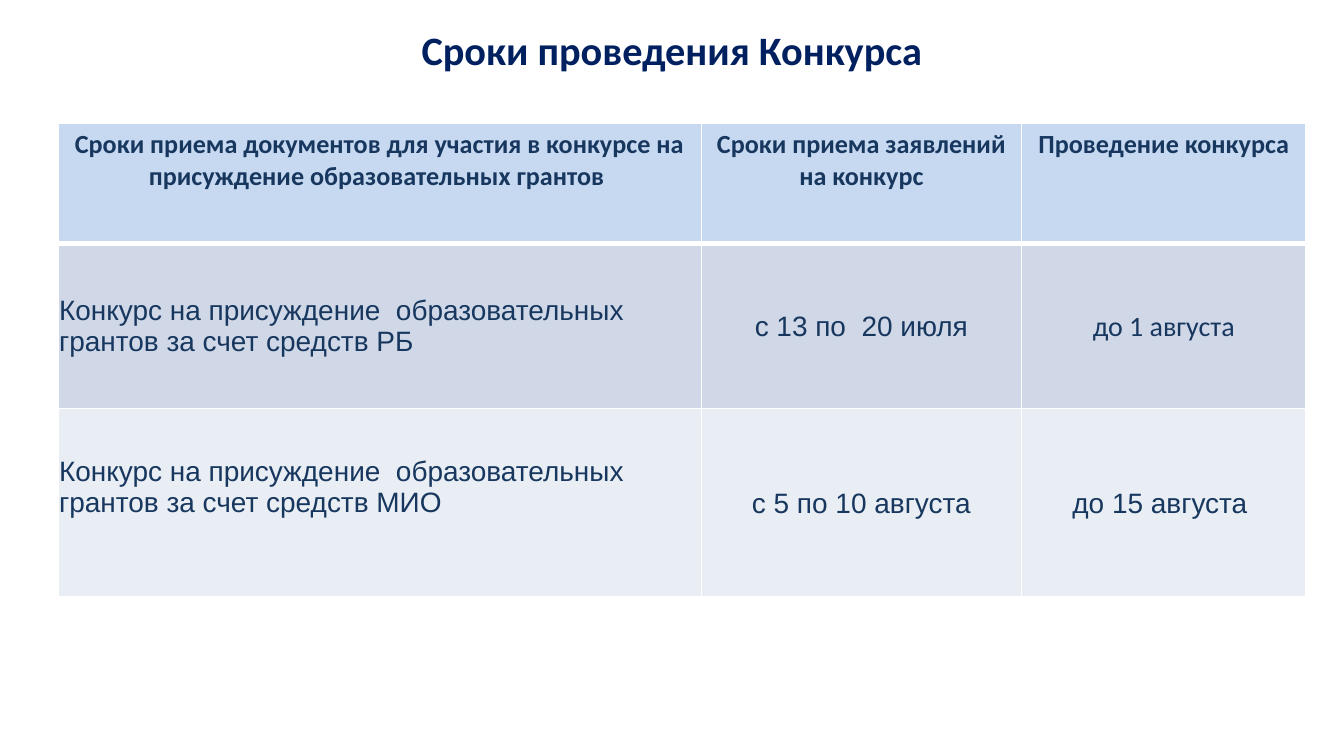
from dataclasses import dataclass

from lxml.etree import SubElement
from pptx import Presentation
from pptx.dml.color import RGBColor
from pptx.enum.text import MSO_ANCHOR as Anchor, MSO_AUTO_SIZE as AutoSize, PP_ALIGN as Align
from pptx.oxml.ns import qn
from pptx.util import Inches, Pt


@dataclass(frozen=True)
class Theme:
    title: str = "002060"
    text: str = "17375E"
    border: str = "FFFFFF"
    header_fill: str = "C6D9F1"
    band_fills: tuple = ("D0D8E8", "E9EDF4")
    heading_font: str = "Calibri"
    body_font: str = "Arial"
    title_size: float = 21.6
    header_size: float = 14
    body_size: float = 15


THEME = Theme()
HEADERS = (
    "Сроки приема документов для участия в конкурсе на присуждение образовательных грантов ",
    "Сроки приема заявлений на конкурс",
    "Проведение конкурса",
)
ROWS = (
    ("Конкурс на присуждение  образовательных грантов за счет средств РБ",
     "с 13 по  20 июля", "до 1 августа"),
    ("Конкурс на присуждение  образовательных грантов за счет средств МИО",
     "с 5 по 10 августа", "до 15 августа "),
)
COL_WIDTHS = (4.79, 2.38, 2.12)
ROW_HEIGHTS = (0.89, 1.23, 1.4)
HEADER_MARGINS = (0.1, 0.04, 0.1, 0.04)
BODY_MARGINS = (0.01, 0.01, 0.01, 0)
RAISED_MARGINS = (0.01, 0.01, 0.01, 0.24)
HEADER_BORDERS = {"a:lnL": 1, "a:lnR": 1, "a:lnT": 1, "a:lnB": 3}
BODY_BORDERS = {"a:lnL": 1, "a:lnR": 1, "a:lnB": 1}
FIRST_BODY_BORDERS = {"a:lnL": 1, "a:lnR": 1, "a:lnT": 3, "a:lnB": 1}


def set_attrs(obj, values):
    for name, value in values.items():
        setattr(obj, name, value)


def write(tf, text, align, color, **font):
    p = tf.paragraphs[0]
    p.alignment = align
    r = p.add_run()
    r.text = text
    set_attrs(r.font, font)
    r.font.color.rgb = RGBColor.from_string(color)


def format_cell(cell, fill, anchor, margins, borders):
    tc_pr = cell._tc.get_or_add_tcPr()
    for tag, width in borders.items():
        ln = SubElement(tc_pr, qn(tag), w=str(Pt(width)))
        SubElement(SubElement(ln, qn("a:solidFill")), qn("a:srgbClr"), val=THEME.border)
    cell.fill.solid()
    cell.fill.fore_color.rgb = RGBColor.from_string(fill)
    tc_pr.append(tc_pr.find(qn("a:solidFill")))
    cell.vertical_anchor = anchor
    sides = ("margin_left", "margin_top", "margin_right", "margin_bottom")
    set_attrs(cell, dict(zip(sides, map(Inches, margins))))


def add_title(s, left, top, width, height):
    sp = s.shapes.title
    set_attrs(sp, dict(left=Inches(left), top=Inches(top),
                       width=Inches(width), height=Inches(height)))
    tf = sp.text_frame
    set_attrs(tf, dict(auto_size=AutoSize.NONE, word_wrap=True,
                       vertical_anchor=Anchor.MIDDLE))
    write(tf, "Сроки проведения Конкурса", Align.CENTER, THEME.title,
          name=THEME.heading_font, size=Pt(THEME.title_size), bold=True)


def add_schedule(s, left, top):
    frame = s.shapes.add_table(
        len(ROW_HEIGHTS), len(COL_WIDTHS), Inches(left), Inches(top),
        Inches(sum(COL_WIDTHS)), Inches(sum(ROW_HEIGHTS)))
    table = frame.table
    for col, width in zip(table.columns, COL_WIDTHS):
        col.width = Inches(width)
    for row, height in zip(table.rows, ROW_HEIGHTS):
        row.height = Inches(height)

    for j, text in enumerate(HEADERS):
        cell = table.cell(0, j)
        format_cell(cell, THEME.header_fill, Anchor.TOP, HEADER_MARGINS, HEADER_BORDERS)
        write(cell.text_frame, text, Align.CENTER, THEME.text,
              name=THEME.heading_font, size=Pt(THEME.header_size), bold=True)

    for i, (row, fill) in enumerate(zip(ROWS, THEME.band_fills), 1):
        borders = FIRST_BODY_BORDERS if i == 1 else BODY_BORDERS
        for j, text in enumerate(row):
            cell = table.cell(i, j)
            margins = RAISED_MARGINS if (i, j) == (2, 0) else BODY_MARGINS
            font = THEME.heading_font if (i, j) == (1, 2) else THEME.body_font
            format_cell(cell, fill, Anchor.MIDDLE, margins, borders)
            write(cell.text_frame, text, Align.CENTER if j else Align.LEFT,
                  THEME.text, name=font, size=Pt(THEME.body_size), bold=False)


def main():
    prs = Presentation()
    width = Inches(10)
    set_attrs(prs, dict(slide_width=width, slide_height=width * 9 // 16))
    s = prs.slides.add_slide(prs.slide_layouts[5])
    add_title(s, 0.5, 0.23, 9, 0.28)
    add_schedule(s, 0.43, 0.92)
    prs.save("out.pptx")


if __name__ == "__main__":
    main()
